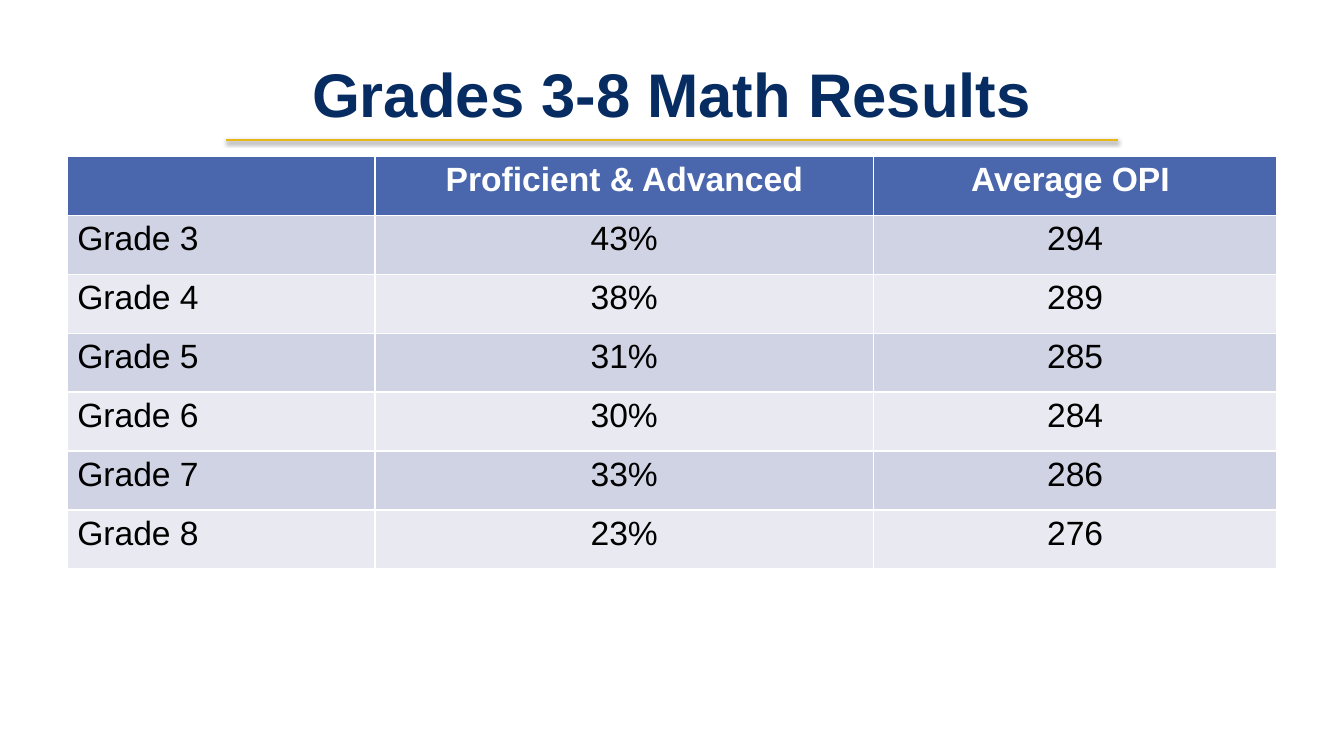
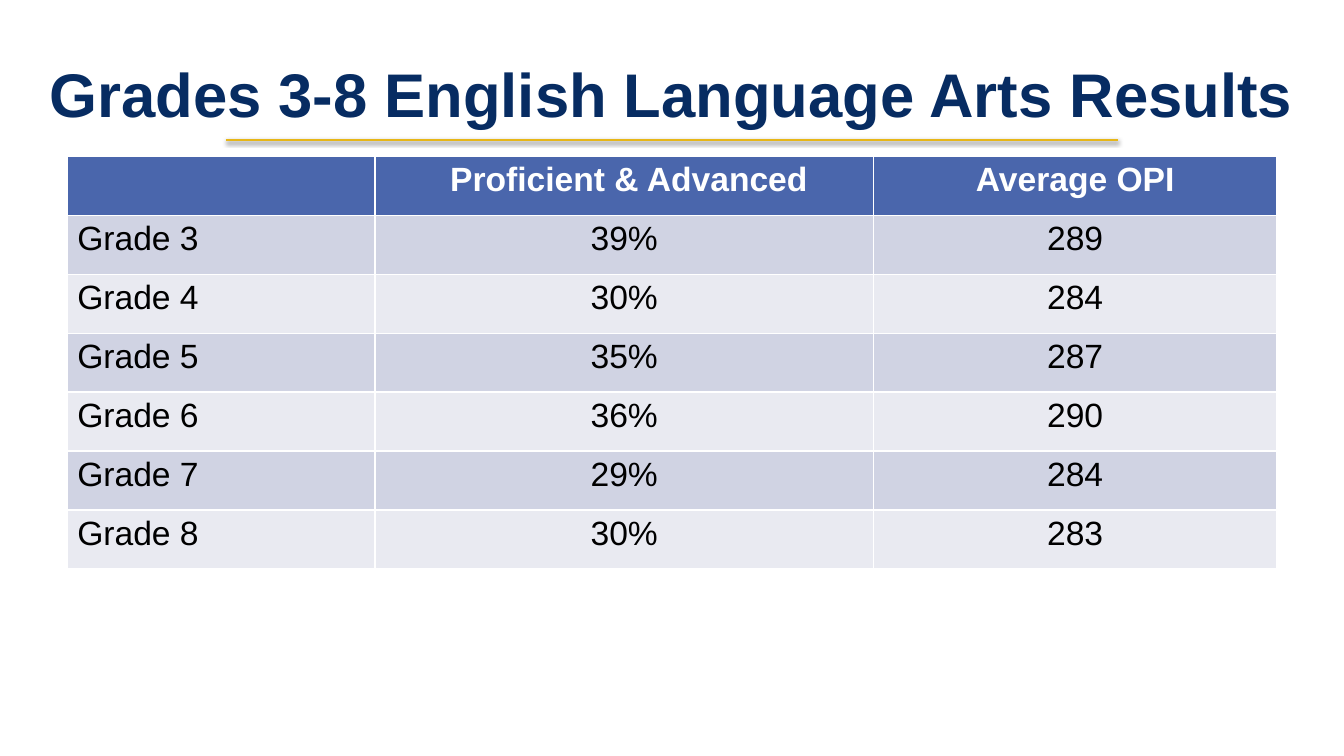
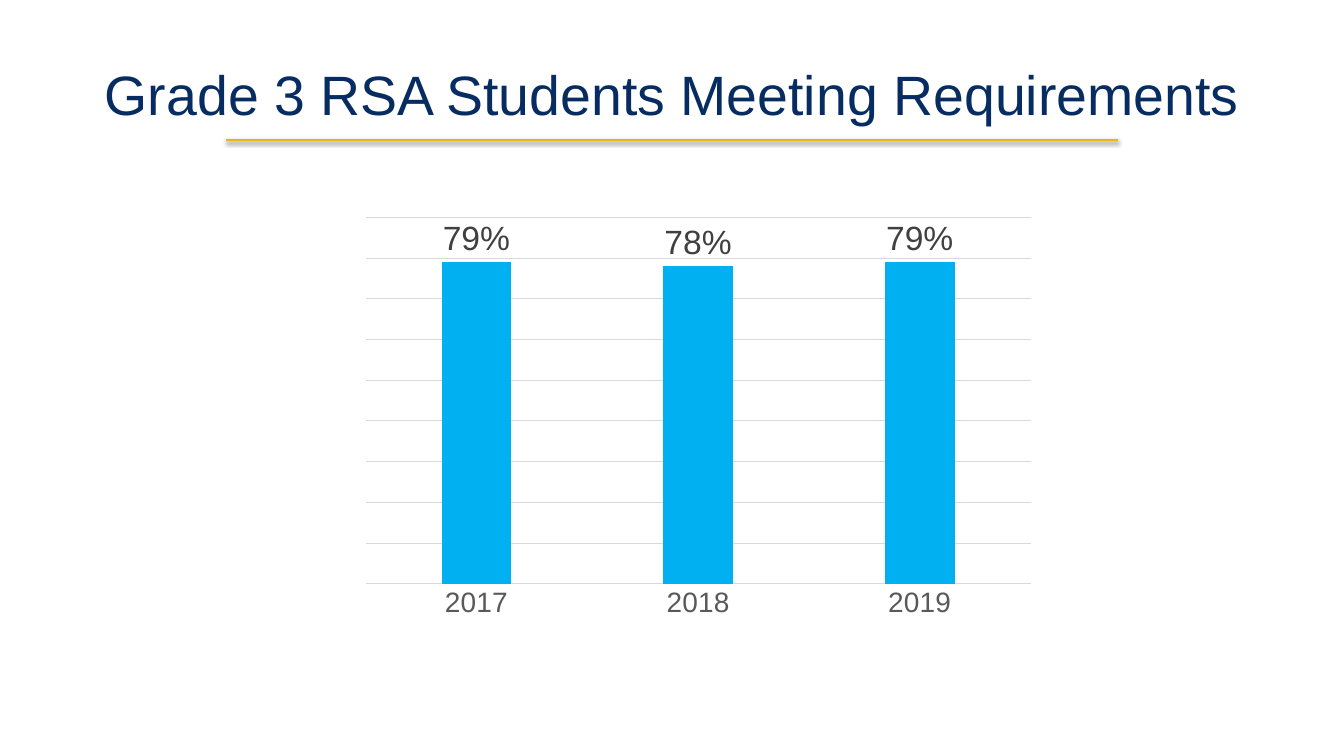
from lxml import etree
from pptx import Presentation, util as u
from pptx.chart.data import CategoryChartData
from pptx.dml.color import RGBColor
from pptx.enum import chart as charts, shapes, text
from pptx.oxml import parse_xml
from pptx.oxml.ns import nsdecls, qn

# Shared style
NAVY = RGBColor(0x07, 0x2C, 0x62)
GOLD = RGBColor(0xE7, 0xB6, 0x17)
BLUE = RGBColor(0x4A, 0x66, 0xAC)
BAND_DARK = RGBColor(0xD0, 0xD3, 0xE3)
BAND_LIGHT = RGBColor(0xE9, 0xEA, 0xF1)
SKY = RGBColor(0x00, 0xB0, 0xF0)
GRID_GRAY = RGBColor(0xD9, 0xD9, 0xD9)
AXIS_GRAY = RGBColor(0x59, 0x59, 0x59)
LABEL_GRAY = RGBColor(0x40, 0x40, 0x40)
WHITE = RGBColor(0xFF, 0xFF, 0xFF)
BLACK = RGBColor(0x00, 0x00, 0x00)
FONT = "Arial"

# Layout grid: 20 columns by 25 rows
SLIDE_WIDTH, SLIDE_HEIGHT = u.Inches(13.33), u.Inches(7.5)
GRID_COLUMNS, GRID_ROWS = 20, 25
TABLE_COLUMNS = (4.58, 7.42, 6)
TABLE_ROW = 1.95

# Content
GRADES = [f"Grade {grade}" for grade in range(3, 9)]
MATH = [(43, 294), (38, 289), (31, 285), (30, 284), (33, 286), (23, 276)]
ENGLISH = [(39, 289), (30, 284), (35, 287), (36, 290), (29, 284), (30, 283)]
RSA = {"2017": 0.79, "2018": 0.78, "2019": 0.79}


def columns(count):
    return u.Emu(round(SLIDE_WIDTH * count / GRID_COLUMNS))


def rows(count):
    return u.Emu(round(SLIDE_HEIGHT * count / GRID_ROWS))


def style_font(font, size, color, bold=False):
    font.name, font.size, font.bold = FONT, u.Pt(size), bold
    font.color.rgb = color


def add_title_rule(slide):
    rule = slide.shapes.add_connector(
        shapes.MSO_CONNECTOR.STRAIGHT,
        columns(3.36), rows(4.63), columns(16.64), rows(4.63))
    rule.line.color.rgb = GOLD
    rule.line.width = u.Pt(2)
    rule._element.spPr.append(parse_xml(
        f'<a:effectLst {nsdecls("a")}>'
        f'<a:outerShdw blurRad="{u.Pt(3.1)}" dist="{u.Pt(1.6)}" dir="5400000" rotWithShape="0">'
        '<a:srgbClr val="000000"><a:alpha val="38000"/></a:srgbClr>'
        '</a:outerShdw></a:effectLst>'))


def add_titled_slide(presentation, title, margin=0, size=44, bold=True):
    slide = presentation.slides.add_slide(presentation.slide_layouts[6])
    add_title_rule(slide)
    box = slide.shapes.add_textbox(
        columns(margin), rows(1), columns(GRID_COLUMNS - 2 * margin), rows(4.17))
    frame = box.text_frame
    frame.word_wrap = True
    frame.vertical_anchor = text.MSO_ANCHOR.MIDDLE
    paragraph = frame.paragraphs[0]
    paragraph.text = title
    paragraph.alignment = text.PP_ALIGN.CENTER
    style_font(paragraph.font, size, NAVY, bold)
    return slide


def fill_cell(cell, value, fill, color, bold, centered):
    cell.fill.solid()
    cell.fill.fore_color.rgb = fill
    paragraph = cell.text_frame.paragraphs[0]
    paragraph.text = value
    paragraph.alignment = text.PP_ALIGN.CENTER if centered else text.PP_ALIGN.LEFT
    style_font(paragraph.font, 24, color, bold)


def add_results_table(slide, headings, results):
    lines = [("", *headings)]
    lines += [(grade, f"{percent}%", str(opi))
              for grade, (percent, opi) in zip(GRADES, results)]
    table = slide.shapes.add_table(
        len(lines), len(TABLE_COLUMNS), columns(1), rows(5.17),
        columns(sum(TABLE_COLUMNS)), rows(TABLE_ROW * len(lines))).table
    for column, width in zip(table.columns, TABLE_COLUMNS):
        column.width = columns(width)
    for row, line in enumerate(lines):
        header = row == 0
        fill = BLUE if header else BAND_DARK if row % 2 else BAND_LIGHT
        for column, value in enumerate(line):
            fill_cell(table.cell(row, column), value, fill,
                      WHITE if header else BLACK, header, column > 0)


def set_plot_area(chart, **shares):
    plot_area = chart._chartSpace.chart.plotArea
    for old_layout in plot_area.findall(qn("c:layout")):
        plot_area.remove(old_layout)
    layout = etree.Element(qn("c:layout"))
    manual = etree.SubElement(layout, qn("c:manualLayout"))
    settings = {"layoutTarget": "inner", "xMode": "edge", "yMode": "edge", **shares}
    for name, value in settings.items():
        etree.SubElement(manual, qn(f"c:{name}")).set("val", str(value))
    plot_area.insert(0, layout)


def style_line(line):
    line.color.rgb = GRID_GRAY
    line.width = u.Pt(0.75)


def add_column_chart(slide, values):
    data = CategoryChartData(number_format="0%")
    data.categories = list(values)
    data.add_series("Series 1", list(values.values()))
    chart = slide.shapes.add_chart(
        charts.XL_CHART_TYPE.COLUMN_CLUSTERED, columns(4.44), rows(4.33),
        columns(11.12), rows(16.83), data).chart
    chart.has_title = chart.has_legend = False
    style_font(chart.font, 20, AXIS_GRAY)
    set_plot_area(chart, x=0.09, y=0.17, w=0.89, h=0.72)

    # Axes
    category_axis, value_axis = chart.category_axis, chart.value_axis
    category_axis.major_tick_mark = charts.XL_TICK_MARK.NONE
    style_line(category_axis.format.line)
    value_axis.visible = False
    value_axis.minimum_scale, value_axis.maximum_scale = 0, 0.9
    value_axis.major_unit = 0.1
    value_axis.has_major_gridlines = True
    style_line(value_axis.major_gridlines.format.line)

    # Columns and their labels
    plot = chart.plots[0]
    plot.gap_width, plot.overlap = 219, -27
    plot.vary_by_categories = False
    fill = plot.series[0].format.fill
    fill.solid()
    fill.fore_color.rgb = SKY
    plot.has_data_labels = True
    labels = plot.data_labels
    labels.show_value = True
    labels.number_format, labels.number_format_is_linked = "0%", False
    labels.position = charts.XL_LABEL_POSITION.OUTSIDE_END
    style_font(labels.font, 24, LABEL_GRAY)


def main():
    presentation = Presentation()
    presentation.slide_width, presentation.slide_height = SLIDE_WIDTH, SLIDE_HEIGHT

    slide = add_titled_slide(presentation, "Grades 3-8 Math Results")
    add_results_table(slide, ("Proficient & Advanced", "Average OPI "), MATH)

    slide = add_titled_slide(presentation, "Grades 3-8 English Language Arts Results")
    add_results_table(slide, (" Proficient & Advanced", "Average OPI"), ENGLISH)

    slide = add_titled_slide(presentation, "Grade 3 RSA Students Meeting Requirements",
                             margin=1, size=39.6, bold=False)
    add_column_chart(slide, RSA)

    presentation.save("out.pptx")


if __name__ == "__main__":
    main()
